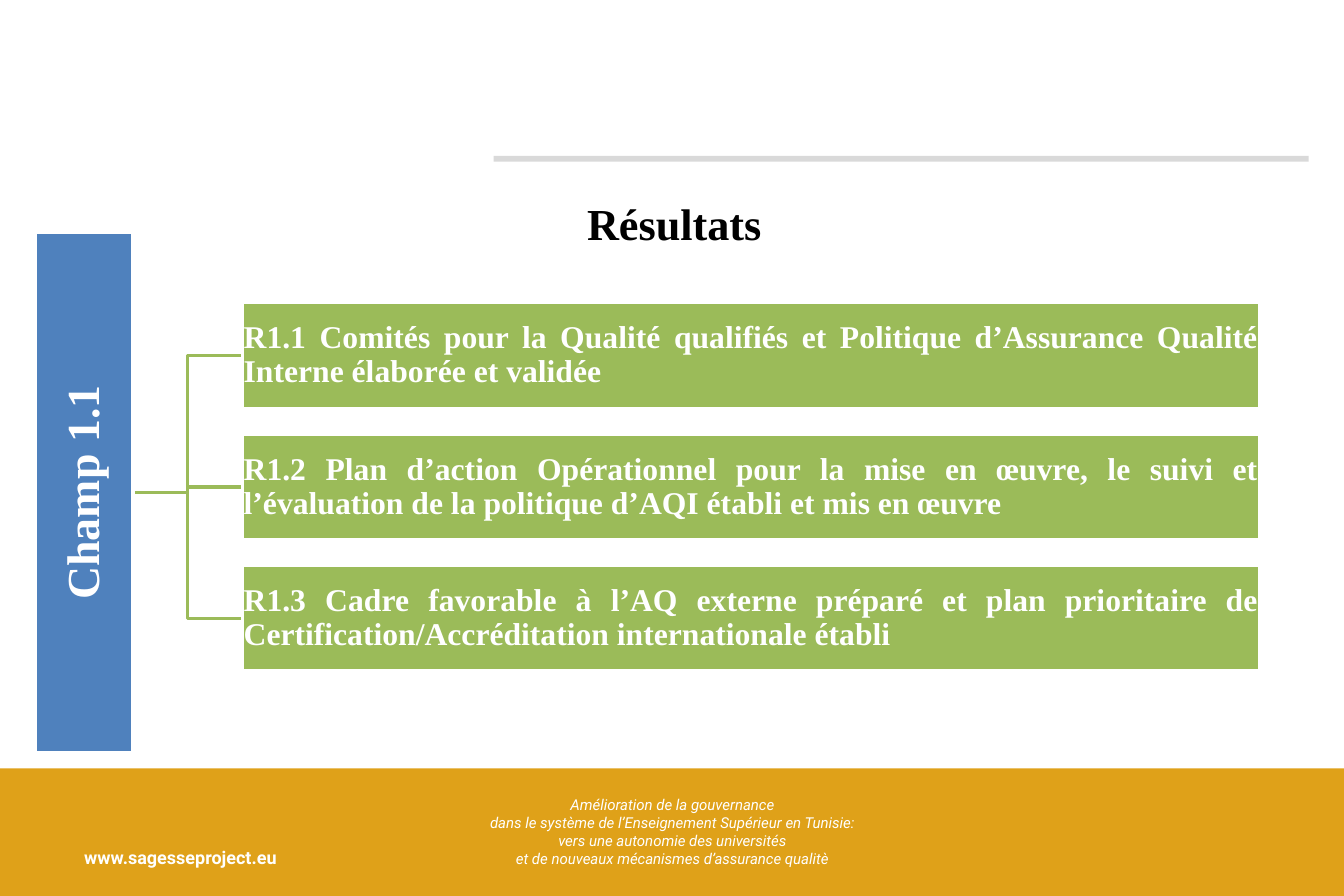
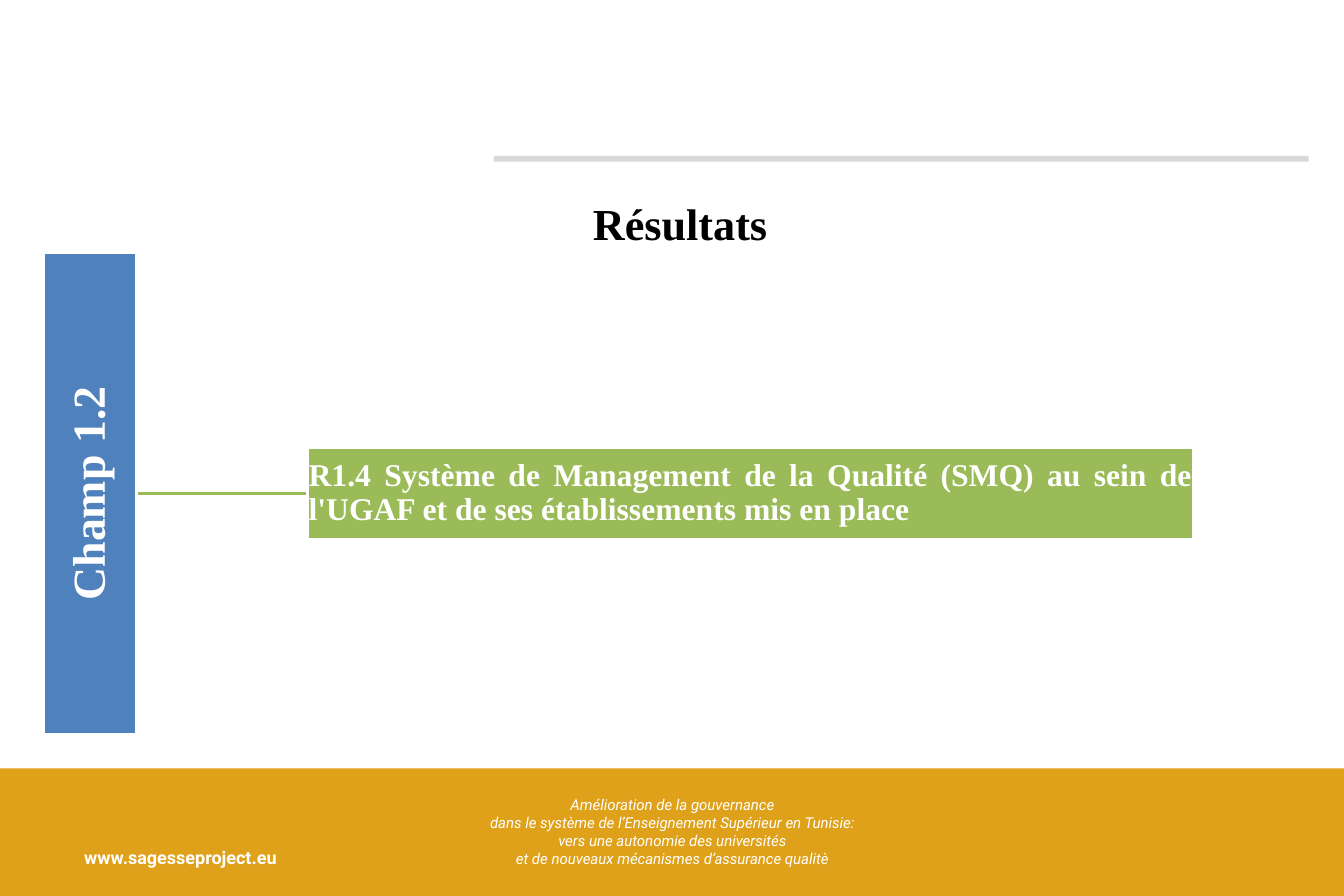
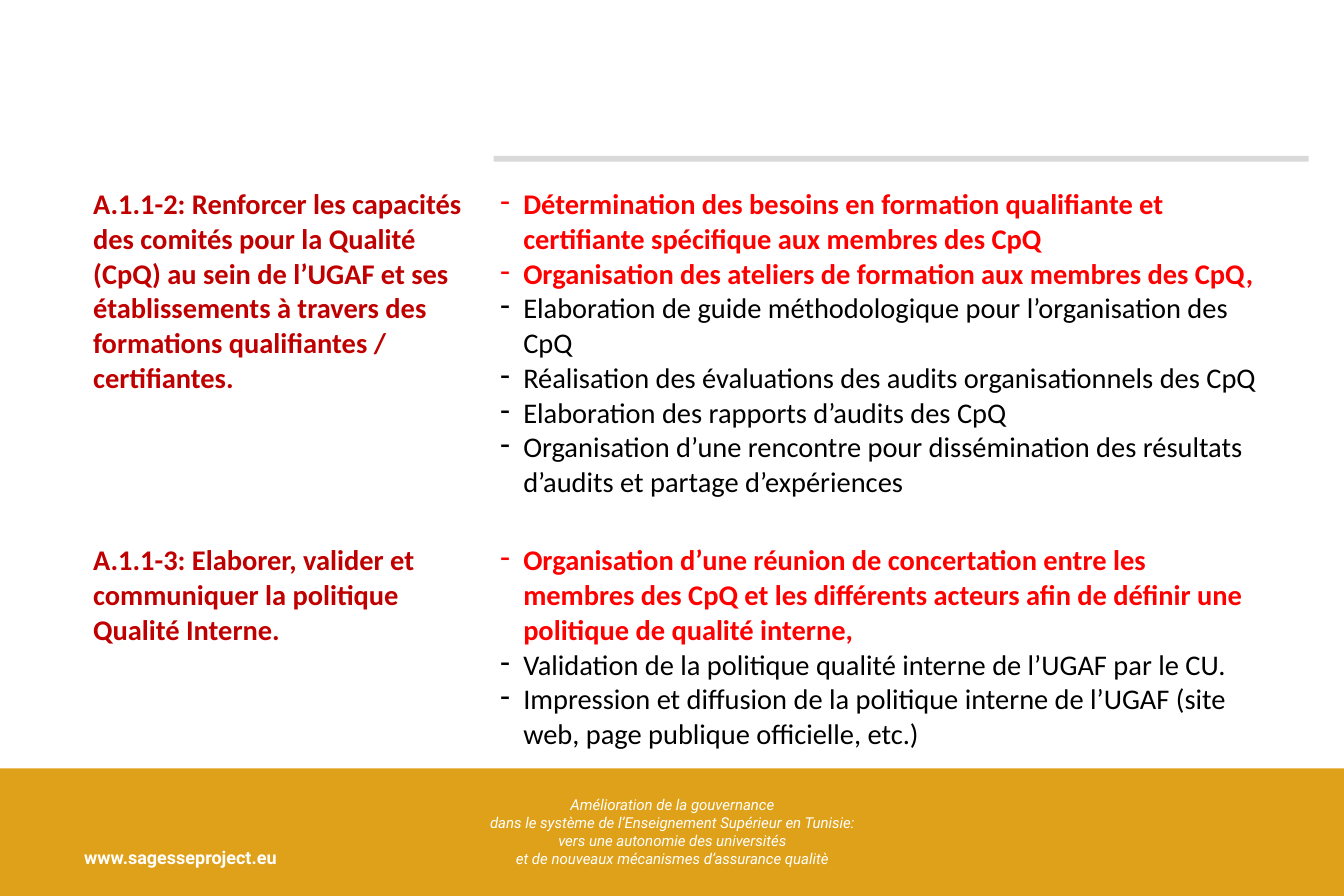
"""Build the three result slides of the quality assurance project deck."""
from dataclasses import dataclass

from lxml import etree
from pptx import Presentation
from pptx.dml.color import RGBColor
from pptx.enum.shapes import MSO_CONNECTOR, MSO_SHAPE
from pptx.enum.text import MSO_ANCHOR, MSO_AUTO_SIZE, PP_ALIGN
from pptx.oxml.ns import qn
from pptx.util import Cm, Pt

LEFT, CENTER, JUSTIFY = PP_ALIGN.LEFT, PP_ALIGN.CENTER, PP_ALIGN.JUSTIFY
TOP, MIDDLE = MSO_ANCHOR.TOP, MSO_ANCHOR.MIDDLE
RECTANGLE, ELBOW = MSO_SHAPE.RECTANGLE, MSO_CONNECTOR.ELBOW
NO_AUTOSIZE = MSO_AUTO_SIZE.NONE
LEFT_SIDE, RIGHT_SIDE = 1, 3
TITLE_ONLY, BLANK = 5, 6

COLORS = {
    "band": "DFA119",
    "rule": "D9D9D9",
    "field": "4F81BD",
    "result": "9BBB59",
    "white": "FFFFFF",
    "black": "000000",
    "activity": "C00000",
    "done": "FF0000",
}
SERIF, SANS, FOOTER = "Times New Roman", "Calibri", "Roboto"

FOOTER_LINES = [
    "Amélioration de la gouvernance",
    "dans le système de l’Enseignement Supérieur en Tunisie:",
    "vers une autonomie des universités",
    "et de nouveaux mécanismes d’assurance qualitè",
]


@dataclass
class Area:
    """A rectangle in centimetres."""
    left: float
    top: float
    width: float
    height: float

    def lengths(self) -> tuple:
        """Return the four lengths in the order python-pptx expects."""
        return Cm(self.left), Cm(self.top), Cm(self.width), Cm(self.height)


@dataclass
class ResultPage:
    """A field of work and the results that branch from it."""
    field: str
    title_left: float
    field_area: Area
    first_result: Area
    results: list


@dataclass
class Activity:
    """One table row: an activity, its finished steps and its next steps."""
    name: str
    done: list
    planned: list


RESULT_PITCH = 2.93
RESULT_PAGES = [
    ResultPage("Champ 1.1", 7.5, Area(0.79, 5.18, 2.18, 11.63), Area(5.41, 6.76, 22.71, 2.36), [
        "R1.1 Comités pour la Qualité qualifiés et Politique d’Assurance Qualité "
        "Interne élaborée et validée",
        "R1.2 Plan d’action Opérationnel pour la mise en œuvre, le suivi et "
        "l’évaluation de la politique d’AQI établi et mis en œuvre",
        "R1.3 Cadre favorable à l’AQ externe préparé et plan prioritaire de "
        "Certification/Accréditation internationale établi",
    ]),
    ResultPage("Champ 1.2", 7.63, Area(0.98, 5.63, 2.06, 10.77), Area(6.86, 9.98, 19.79, 2.06), [
        "R1.4 Système de Management de la Qualité (SMQ) au sein de "
        "l'UGAF et de ses établissements mis en place",
    ]),
]
ACTIVITIES = [
    Activity(
        "A.1.1-2: Renforcer les capacités des comités pour la Qualité (CpQ) au sein de "
        "l’UGAF et ses établissements à travers des formations qualifiantes / certifiantes.",
        ["Détermination des besoins en formation qualifiante et certifiante spécifique "
         "aux membres des CpQ",
         "Organisation des ateliers de formation aux membres des CpQ,"],
        ["Elaboration de guide méthodologique pour l’organisation des CpQ",
         "Réalisation des évaluations des audits organisationnels des CpQ",
         "Elaboration des rapports d’audits des CpQ",
         "Organisation d’une rencontre pour dissémination des résultats d’audits "
         "et partage d’expériences"],
    ),
    Activity(
        "A.1.1-3: Elaborer, valider et communiquer la politique Qualité Interne.",
        ["Organisation d’une réunion de concertation entre les membres des CpQ et les "
         "différents acteurs afin de définir une politique de qualité interne,"],
        ["Validation de la politique qualité interne de l’UGAF par le CU.",
         "Impression et diffusion de la politique interne de l’UGAF (site web, page "
         "publique officielle, etc.)"],
    ),
]


def rgb(name: str) -> RGBColor:
    """Look up a named colour."""
    return RGBColor.from_string(COLORS[name])


def write(paragraph, text: str, *, font: str, size: float, color: str, bold: bool = False,
          italic: bool = False, align=LEFT, line_spacing: float = 1.0,
          indent: float = 0, bullet: str = "") -> None:
    """Fill one paragraph with formatted text."""
    if indent:
        properties = paragraph._p.get_or_add_pPr()
        properties.set("marL", str(Cm(indent)))
        properties.set("indent", str(-Cm(indent) if bullet else 0))
        if bullet:
            etree.SubElement(properties, qn("a:buChar")).set("char", bullet)
    paragraph.alignment = align
    paragraph.line_spacing = line_spacing
    span = paragraph.add_run()
    span.text = text
    span.font.name, span.font.size = font, Pt(size)
    span.font.bold, span.font.italic = bold, italic
    span.font.color.rgb = rgb(color)


def write_lines(frame, lines: list, **style) -> None:
    """Write each line as a paragraph of the same style."""
    for number, line in enumerate(lines):
        paragraph = frame.add_paragraph() if number else frame.paragraphs[0]
        write(paragraph, line, **style)


def add_text(page, area: Area, lines: list, **style):
    """Add a wrapping text box."""
    box = page.shapes.add_textbox(*area.lengths())
    box.text_frame.word_wrap = True
    write_lines(box.text_frame, lines, **style)
    return box


def add_block(page, area: Area, fill: str, outline: str = ""):
    """Add a plain rectangle, with an outline if a colour is given."""
    block = page.shapes.add_shape(RECTANGLE, *area.lengths())
    block.shadow.inherit = False
    block.fill.solid()
    block.fill.fore_color.rgb = rgb(fill)
    if outline:
        block.line.color.rgb = rgb(outline)
        block.line.width = Pt(2)
    else:
        block.line.fill.background()
    return block


def add_label(page, area: Area, text: str, *, fill: str, size: float, align, inset: float):
    """Add an outlined rectangle with a bold white label."""
    label = add_block(page, area, fill, "white")
    frame = label.text_frame
    frame.word_wrap = True
    frame.vertical_anchor = MIDDLE
    frame.margin_left = frame.margin_right = Cm(inset)
    frame.margin_top = frame.margin_bottom = Cm(inset)
    write(frame.paragraphs[0], text, font=SERIF, size=size, color="white", bold=True,
          align=align, line_spacing=0.9)
    return label


def add_branch(page, start, end) -> None:
    """Join two rectangles with an elbow connector placed behind them."""
    branch = page.shapes.add_connector(ELBOW, 0, 0, 0, 0)
    branch.begin_connect(start, RIGHT_SIDE)
    branch.end_connect(end, LEFT_SIDE)
    branch.line.color.rgb = rgb("result")
    branch.line.width = Pt(2)
    etree.SubElement(branch.element.spPr, qn("a:effectLst"))
    page.shapes.element.insert(2, branch.element)


def build_master(deck, page) -> None:
    """Draw the band, footer and rule, and move them to the slide master."""
    parts = [
        add_block(page, Area(0, 17.15, 30, 2.85), "band"),
        add_text(page, Area(8.76, 17.63, 12.5, 1.88), FOOTER_LINES, font=FOOTER, size=9.5,
                 color="white", italic=True, align=CENTER),
        add_text(page, Area(1.63, 18.77, 5.61, 0.74), ["www.sagesseproject.eu"], font=FOOTER,
                 size=11.4, color="white", bold=True),
        add_block(page, Area(11.02, 3.48, 18.19, 0.13), "rule"),
    ]
    for number, part in enumerate(parts, start=101):
        part.element.xpath(".//p:cNvPr")[0].set("id", str(number))
        deck.slide_master.shapes.element.append(part.element)


def add_title(page, text: str, left: float) -> None:
    """Place and format the title placeholder."""
    title = page.shapes.title
    title.left, title.top, title.width, title.height = Area(left, 4.3, 15.1, 1.34).lengths()
    title.text_frame.auto_size = NO_AUTOSIZE
    title.text_frame.vertical_anchor = MIDDLE
    write(title.text_frame.paragraphs[0], text, font=SERIF, size=28, color="black",
          bold=True, align=CENTER)


def build_results(page, content: ResultPage) -> None:
    """Draw a field and its results as a tree."""
    add_title(page, "Résultats", content.title_left)
    field = add_label(page, content.field_area, content.field, fill="field", size=29,
                      align=CENTER, inset=0.05)
    field.text_frame._txBody.bodyPr.set("vert", "vert270")
    first = content.first_result
    for row, text in enumerate(content.results):
        area = Area(first.left, first.top + row * RESULT_PITCH, first.width, first.height)
        result = add_label(page, area, text, fill="result", size=20, align=JUSTIFY, inset=0.03)
        add_branch(page, field, result)


def build_activities(page) -> None:
    """Draw the table of activities and their steps."""
    area = Area(1.8, 4.19, 26.42, 12.6)
    table = page.shapes.add_table(len(ACTIVITIES), 2, *area.lengths()).table
    table.first_row = table.horz_banding = False
    for column, width in zip(table.columns, (9.22, 17.2)):
        column.width = Cm(width)
    for row, height in zip(table.rows, (7.95, 4.65)):
        row.height = Cm(height)
        for cell in row.cells:
            cell.fill.background()
            cell.vertical_anchor = TOP
            cell.margin_left = cell.margin_right = Cm(0.15)
            cell.margin_top = cell.margin_bottom = 0
    for row, activity in zip(table.rows, ACTIVITIES):
        name, steps = (cell.text_frame for cell in row.cells)
        write(name.paragraphs[0], activity.name, font=SANS, size=18, color="activity",
              bold=True, indent=0.13)
        for number, step in enumerate(activity.done + activity.planned):
            done = number < len(activity.done)
            paragraph = steps.add_paragraph() if number else steps.paragraphs[0]
            write(paragraph, step, font=SANS, size=18, color="done" if done else "black",
                  bold=done, indent=0.51, bullet="-")


def main() -> None:
    """Build and save the deck."""
    deck = Presentation()
    deck.slide_width, deck.slide_height = Cm(30), Cm(20)
    pages = [deck.slides.add_slide(deck.slide_layouts[TITLE_ONLY]) for _ in RESULT_PAGES]
    build_master(deck, pages[0])
    for page, content in zip(pages, RESULT_PAGES):
        build_results(page, content)
    build_activities(deck.slides.add_slide(deck.slide_layouts[BLANK]))
    deck.save("out.pptx")


if __name__ == "__main__":
    main()
